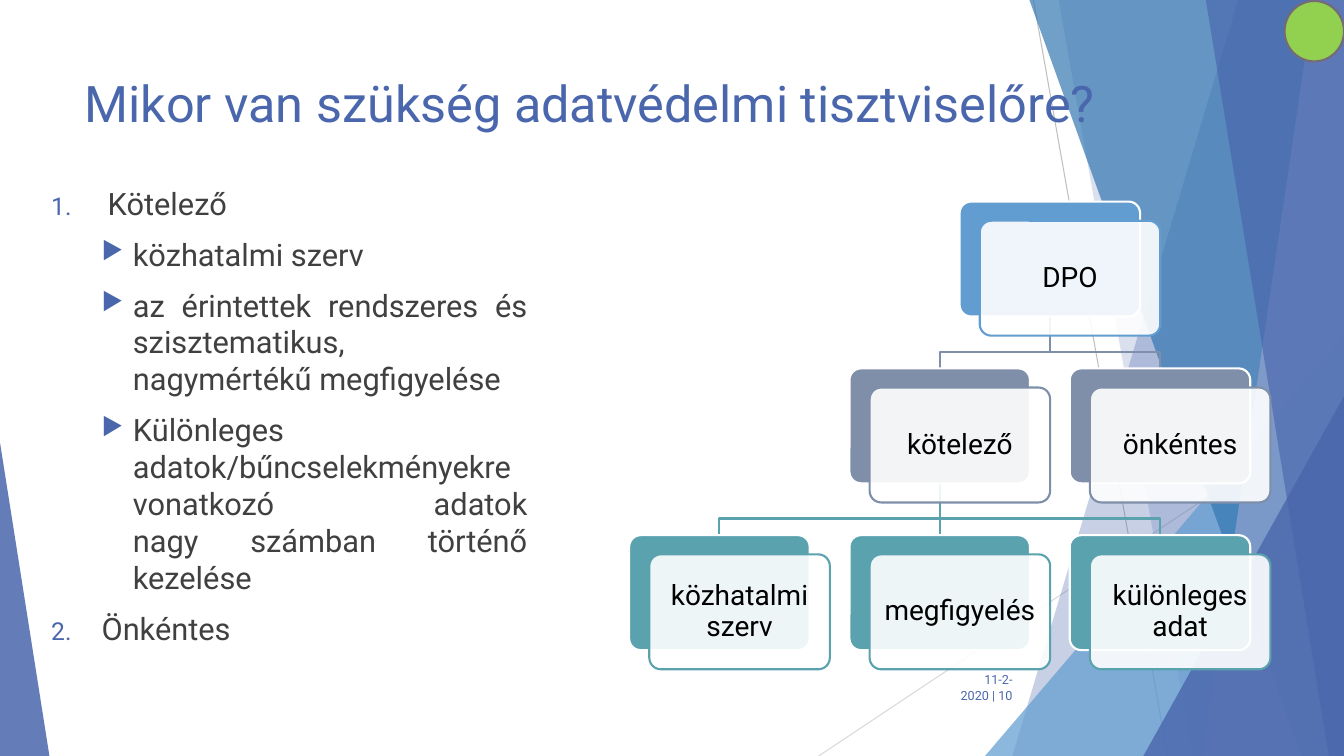
from dataclasses import dataclass

from lxml.etree import SubElement
from pptx import Presentation
from pptx.dml.color import RGBColor
from pptx.enum.shapes import MSO_CONNECTOR, MSO_SHAPE
from pptx.enum.text import MSO_ANCHOR, PP_ALIGN
from pptx.oxml.ns import qn
from pptx.util import Inches, Pt


@dataclass(frozen=True)
class Theme:
    font: str = "Roboto"
    blue: str = "4A66AC"
    sky: str = "629DD1"
    ocean: str = "3477B2"
    lavender: str = "90A2CF"
    slate: str = "7F8FA9"
    teal: str = "5AA2AE"
    green: str = "92D050"
    badge_line: str = "746B76"
    text: str = "404040"
    black: str = "000000"
    white: str = "FFFFFF"
    title_size: int = 36
    body_size: int = 22
    card_size: int = 20
    footer_size: int = 9
    line: float = 1.5


T = Theme()
W, H = 13.33, 7.5

TITLE = "Mikor van szükség adatvédelmi tisztviselőre?"
FOOTER = "11-2-2020 | 10"
# level, left margin, hanging indent, text
BODY = [
    (0, 0.56, 0.56, "Kötelező"),
    (1, 0.81, 0.31, "közhatalmi szerv"),
    (1, 0.81, 0.31, "az érintettek rendszeres és szisztematikus, nagymértékű megfigyelése"),
    (1, 0.81, 0.31, "Különleges adatok/bűncselekményekre vonatkozó adatok\vnagy számban történő kezelése"),
    (0, 0.5, 0.5, "Önkéntes"),
]
# name: column, row, colour
CARDS = {
    "DPO": (1.5, 0, T.sky),
    "kötelező": (1, 1, T.slate),
    "önkéntes": (2, 1, T.slate),
    "közhatalmi szerv": (0, 2, T.teal),
    "megfigyelés": (1, 2, T.teal),
    "különleges adat": (2, 2, T.teal),
}
LINKS = [
    ("DPO", "önkéntes"), ("DPO", "kötelező"),
    ("kötelező", "különleges adat"), ("kötelező", "megfigyelés"),
    ("kötelező", "közhatalmi szerv"),
]
HAIRLINES = [((10.25, 0), (11.58, H), "BFBFBF"), ((W, 4.03), (8.12, H), "D9D9D9")]
# Right-hand bands: x at the top edge, x at the bottom edge, colour, opacity
BANDS_BACK = [(12.28, 10.04, T.blue, 30), (10.5, 11.83, T.blue, 20)]
BANDS_FRONT = [
    (10.21, 12.91, T.ocean, 70), (13.03, 11.92, T.lavender, 70), (11.96, 13.18, T.blue, 65),
]
# Bottom corners: left, top, width, apex position, colour, opacity
CORNER_BACK = (9.77, 3.33, 3.56, 1, T.sky, 72)
CORNERS_FRONT = [(11.34, 3.93, 1.99, 1, T.blue, 80), (0, 4.39, 0.49, 0, T.blue, 85)]

GRID_X, GRID_Y, STEP_X, STEP_Y = 6.24, 2.0, 2.185, 1.655
CARD_W, CARD_H, SHIFT_X, SHIFT_Y = 1.79, 1.14, 0.2, 0.19
BEND = 0.35

prs = Presentation()
prs.slide_width, prs.slide_height = Inches(W), Inches(H)
s = prs.slides.add_slide(prs.slide_layouts[6])
s.background.fill.solid()
s.background.fill.fore_color.rgb = RGBColor.from_string(T.white)


def paint(sp, fill=None, line=None, opacity=100):
    sp.shadow.inherit = False
    if fill:
        sp.fill.solid()
        sp.fill.fore_color.rgb = RGBColor.from_string(fill)
        if opacity < 100:
            color = sp.fill._xPr.find(qn("a:solidFill"))[0]
            SubElement(color, qn("a:alpha"), val=str(opacity * 1000))
    else:
        sp.fill.background()
    if line:
        sp.line.color.rgb = RGBColor.from_string(line)
        sp.line.width = Pt(T.line)
    else:
        sp.line.fill.background()
    return sp


def shape(kind, x, y, w, h, adj=None, **look):
    sp = s.shapes.add_shape(kind, Inches(x), Inches(y), Inches(w), Inches(h))
    if adj is not None:
        sp.adjustments[0] = adj
    return paint(sp, **look)


def outline(points, close, **look):
    pts = [(Inches(x), Inches(y)) for x, y in points]
    fb = s.shapes.build_freeform(*pts[0], scale=1.0)
    fb.add_line_segments(pts[1:], close=close)
    return paint(fb.convert_to_shape(), **look)


def straight(start, end, color, width):
    cx = s.shapes.add_connector(MSO_CONNECTOR.STRAIGHT, *map(Inches, start + end))
    cx.line.color.rgb = RGBColor.from_string(color)
    cx.line.width = Pt(width)
    SubElement(cx._element.spPr, qn("a:effectLst"))
    return cx


def style(p, size, color, align):
    p.alignment = align
    for r in p.runs:
        r.font.name, r.font.size = T.font, Pt(size)
        r.font.color.rgb = RGBColor.from_string(color)


def textbox(x, y, w, h):
    tf = s.shapes.add_textbox(Inches(x), Inches(y), Inches(w), Inches(h)).text_frame
    tf.word_wrap = True
    return tf


def bullet(p, level, margin, hanging):
    """Numbers the top level and puts triangles on the second."""
    p.level = level
    pPr = p._p.get_or_add_pPr()
    pPr.set("marL", str(Inches(margin)))
    pPr.set("indent", str(-Inches(hanging)))
    SubElement(SubElement(pPr, qn("a:buClr")), qn("a:srgbClr"), val=T.blue)
    SubElement(pPr, qn("a:buSzPct"), val="80000")
    if level:
        SubElement(pPr, qn("a:buChar"), char="▶")
    else:
        SubElement(pPr, qn("a:buAutoNum"), type="arabicPeriod")


def band(top, bottom, fill, opacity):
    outline([(top, 0), (W, 0), (W, H), (bottom, H)], True, fill=fill, opacity=opacity)


def corner(x, y, w, apex, fill, opacity):
    shape(MSO_SHAPE.ISOSCELES_TRIANGLE, x, y, w, H - y, apex, fill=fill, opacity=opacity)


def card_at(name):
    col, row, _ = CARDS[name]
    return GRID_X + col * STEP_X, GRID_Y + row * STEP_Y


# Backdrop
for start, end, color in HAIRLINES:
    straight(start, end, color, 0.75)
for item in BANDS_BACK:
    band(*item)
corner(*CORNER_BACK)
for item in BANDS_FRONT:
    band(*item)
for item in CORNERS_FRONT:
    corner(*item)

# Texts
tf = textbox(0.74, 0.67, 10.3, 0.84)
tf.text = TITLE
style(tf.paragraphs[0], T.title_size, T.blue, PP_ALIGN.LEFT)

tf = textbox(0.41, 1.78, 4.92, 4.73)
for i, (level, margin, hanging, text) in enumerate(BODY):
    p = tf.add_paragraph() if i else tf.paragraphs[0]
    p.text = text
    bullet(p, level, margin, hanging)
    p.space_before = Pt(10 if i else 0)
    style(p, T.body_size, T.text, PP_ALIGN.JUSTIFY)

tf = textbox(9.39, 6.62, 0.75, 0.4)
tf.text = FOOTER
tf.vertical_anchor = MSO_ANCHOR.MIDDLE
style(tf.paragraphs[0], T.footer_size, T.blue, PP_ALIGN.RIGHT)

# Organisation chart: links lie behind the cards
straight_links = []
for parent, child in LINKS:
    (px, py), (cx, cy) = card_at(parent), card_at(child)
    x0, y0, x1 = px + CARD_W / 2, py + CARD_H, cx + CARD_W / 2
    color = CARDS[child][2]
    if px == cx:
        straight_links.append((straight((x0, y0), (x1, cy), color, T.line), parent, child))
    else:
        bend = y0 + BEND
        outline([(x0, y0), (x0, bend), (x1, bend), (x1, cy)], False, line=color)

backs = {}
for name, (_, _, color) in CARDS.items():
    x, y = card_at(name)
    backs[name] = shape(MSO_SHAPE.ROUNDED_RECTANGLE, x, y, CARD_W, CARD_H, 0.1,
                        fill=color, line=T.white)
    front = shape(MSO_SHAPE.ROUNDED_RECTANGLE, x + SHIFT_X, y + SHIFT_Y, CARD_W, CARD_H, 0.1,
                  fill=T.white, line=color, opacity=90)
    tf = front.text_frame
    tf.word_wrap = True
    tf.vertical_anchor = MSO_ANCHOR.MIDDLE
    tf.margin_left = tf.margin_right = tf.margin_top = tf.margin_bottom = Inches(0.1)
    tf.text = name
    tf.paragraphs[0].line_spacing = 0.9
    style(tf.paragraphs[0], T.card_size, T.black, PP_ALIGN.CENTER)

for link, parent, child in straight_links:
    link.begin_connect(backs[parent], 2)
    link.end_connect(backs[child], 0)

shape(MSO_SHAPE.OVAL, 12.74, 0.01, 0.59, 0.6, fill=T.green, line=T.badge_line)

prs.save("out.pptx")
